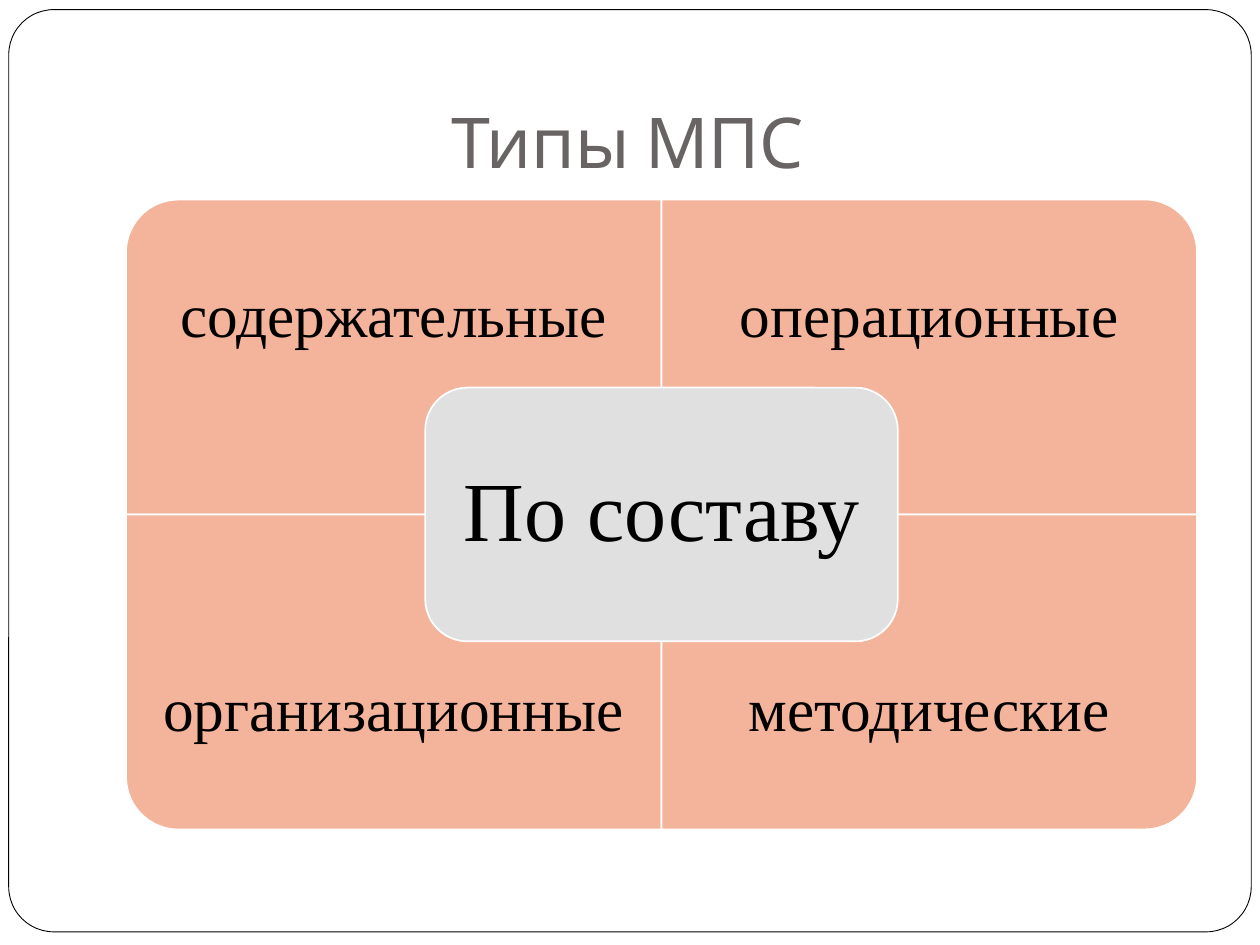
import pptx
import pptx.util
import pptx.dml.color
import pptx.enum.shapes
import pptx.enum.text

Pt = pptx.util.Pt
RGB = pptx.dml.color.RGBColor.from_string
KIND = pptx.enum.shapes.MSO_SHAPE
ALIGN = pptx.enum.text.PP_ALIGN
ANCHOR = pptx.enum.text.MSO_ANCHOR

HUES = {"white": "FFFFFF", "black": "000000", "title": "696464",
        "peach": "F4B39B", "grey": "E1E0E0"}

deck = pptx.Presentation()
deck.slide_width, deck.slide_height = Pt(720), Pt(540)
slide = deck.slides.add_slide(deck.slide_layouts[6])


def write(shape, text, size, font="Times New Roman", hue="black",
          align=ALIGN.CENTER, anchor=ANCHOR.MIDDLE, space=0.9,
          inset=(19.2, 19.2, 19.2, 19.2)):
    frame = shape.text_frame
    frame.word_wrap = True
    frame.vertical_anchor = anchor
    (frame.margin_left, frame.margin_top,
     frame.margin_right, frame.margin_bottom) = map(Pt, inset)
    para = frame.paragraphs[0]
    para.alignment, para.line_spacing = align, space
    run = para.add_run()
    run.text = text
    run.font.size, run.font.name = Pt(size), font
    run.font.color.rgb = RGB(HUES[hue])


def draw(kind, box, fill, line="white", width=1):
    shape = slide.shapes.add_shape(kind, *map(Pt, box))
    shape.shadow.inherit = False
    shape.fill.solid()
    shape.fill.fore_color.rgb = RGB(HUES[fill])
    shape.line.color.rgb = RGB(HUES[line])
    shape.line.width = Pt(width)
    return shape


# Slide frame
frame = draw(KIND.ROUNDED_RECTANGLE, (5, 5.5, 710, 527), "white", "black", 0.5)
frame.adjustments[0] = 0.049

# Title, set in from the left edge of its box
title = slide.shapes.add_textbox(Pt(72), Pt(21.6), Pt(612), Pt(90))
write(title, "Типы МПС", 40, font="Cabin", hue="title", align=ALIGN.LEFT,
      anchor=ANCHOR.BOTTOM, space=1, inset=(186, 3.6, 7.2, 7.2))

# Four quarters around a shared centre, each turned to round its outer corner
mid_x, mid_y = 378, 294
wide, high = 306, 180
label = high * 0.75
parts = [("содержательные", -1, -1, 270), ("операционные", 1, -1, 0),
         ("организационные", -1, 1, 180), ("методические", 1, 1, 90)]
for text, col, row, turn in parts:
    x, y = mid_x + col * wide / 2, mid_y + row * high / 2
    w, h = (high, wide) if turn % 180 else (wide, high)
    part = draw(KIND.ROUND_1_RECTANGLE, (x - w / 2, y - h / 2, w, h), "peach")
    part.rotation = turn
    top = y - label / 2 + row * (high - label) / 2
    area = slide.shapes.add_textbox(Pt(x - wide / 2), Pt(top),
                                    Pt(wide), Pt(label))
    write(area, text, 35)

# Centre
core_w, core_h = 270, 145
core = draw(KIND.ROUNDED_RECTANGLE,
            (mid_x - core_w / 2, mid_y - core_h / 2, core_w, core_h), "grey")
write(core, "По составу", 48, inset=(14.4, 14.4, 14.4, 14.4))

deck.save("out.pptx")
